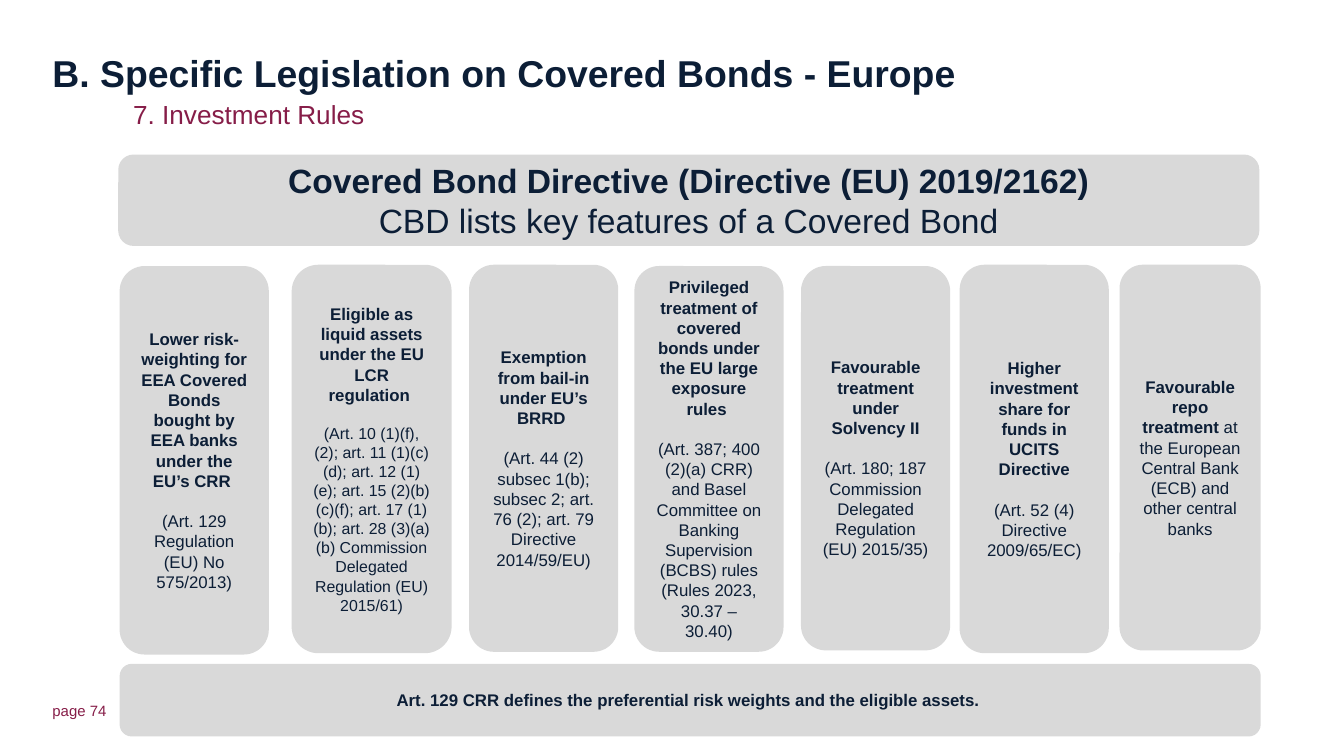
from dataclasses import dataclass

from pptx import Presentation
from pptx.dml.color import RGBColor
from pptx.enum.shapes import MSO_SHAPE
from pptx.enum.text import MSO_ANCHOR, PP_ALIGN
from pptx.util import Inches, Pt


@dataclass(frozen=True)
class Theme:
    font: str = "Arial"
    navy: str = "0C1E36"
    wine: str = "861D48"
    grey: str = "D9D9D9"
    title: float = 20
    banner: float = 18
    subtitle: float = 14
    body: float = 9
    small: float = 8.5
    page: float = 8


@dataclass(frozen=True)
class Box:
    left: float
    top: float
    width: float
    height: float


@dataclass(frozen=True)
class Card:
    box: Box
    heading: str
    source: str = ""
    tail: str = ""  # regular text that continues the heading
    source_size: float = Theme.body


THEME = Theme()

CARDS = [
    Card(Box(0.89, 1.98, 1.11, 2.89),
         "Lower risk-weighting for EEA Covered Bonds bought by EEA banks under the EU’s CRR ",
         "(Art. 129 Regulation (EU) No 575/2013)"),
    Card(Box(2.17, 1.97, 1.19, 2.89),
         "Eligible as liquid assets under the EU LCR regulation ",
         "(Art. 10 (1)(f), (2); art. 11 (1)(c)(d); art. 12 (1)(e); art. 15 (2)(b)(c)(f); "
         "art. 17 (1)(b); art. 28 (3)(a)(b) Commission Delegated Regulation (EU) 2015/61)",
         source_size=THEME.small),
    Card(Box(3.49, 1.97, 1.11, 2.88),
         "Exemption from bail-in under EU’s BRRD ",
         "(Art. 44 (2) subsec 1(b); subsec 2; art. 76 (2); art. 79 Directive 2014/59/EU)"),
    Card(Box(4.72, 1.98, 1.11, 2.87),
         "Privileged treatment of covered bonds under the EU large exposure rules ",
         "(Art. 387; 400 (2)(a) CRR) and Basel Committee on Banking Supervision (BCBS) "
         "rules (Rules 2023, 30.37 – 30.40)"),
    Card(Box(5.96, 1.98, 1.11, 2.86),
         "Favourable treatment under Solvency II",
         "(Art. 180; 187 Commission Delegated Regulation (EU) 2015/35)"),
    Card(Box(7.14, 1.97, 1.11, 2.89),
         "Higher investment share for funds in UCITS Directive",
         "(Art. 52 (4) Directive 2009/65/EC)"),
    Card(Box(8.33, 1.97, 1.05, 2.87),
         "Favourable repo treatment",
         tail=" at the European Central Bank (ECB) and other central banks"),
]


def place(box: Box) -> tuple:
    return Inches(box.left), Inches(box.top), Inches(box.width), Inches(box.height)


def add_run(p, text: str, size: float, bold: bool = False, color: str = THEME.navy) -> None:
    r = p.add_run()
    r.text = text
    r.font.name = THEME.font
    r.font.size = Pt(size)
    r.font.bold = bold
    r.font.color.rgb = RGBColor.from_string(color)


def format_plain(tf) -> None:
    """Wrapped, vertically centred text without insets."""
    tf.word_wrap = True
    tf.vertical_anchor = MSO_ANCHOR.MIDDLE
    tf.margin_left = tf.margin_right = tf.margin_top = tf.margin_bottom = 0
    tf.paragraphs[0].alignment = PP_ALIGN.LEFT


def add_label(slide, box: Box, text: str, size: float) -> None:
    tf = slide.shapes.add_textbox(*place(box)).text_frame
    format_plain(tf)
    add_run(tf.paragraphs[0], text, size, color=THEME.wine)


def add_panel(slide, box: Box):
    """Draw a grey rounded panel and return its text frame."""
    sp = slide.shapes.add_shape(MSO_SHAPE.ROUNDED_RECTANGLE, *place(box))
    sp.shadow.inherit = False
    sp.fill.solid()
    sp.fill.fore_color.rgb = RGBColor.from_string(THEME.grey)
    sp.line.fill.background()
    tf = sp.text_frame
    tf.word_wrap = True
    tf.vertical_anchor = MSO_ANCHOR.MIDDLE
    return tf


def centre(p):
    p.alignment = PP_ALIGN.CENTER
    return p


def add_card(slide, card: Card) -> None:
    tf = add_panel(slide, card.box)
    p = centre(tf.paragraphs[0])
    add_run(p, card.heading, THEME.body, bold=True)
    if card.tail:
        add_run(p, card.tail, THEME.body)
    if card.source:
        p = centre(tf.add_paragraph())
        p.space_before = Pt(card.source_size * 1.2)
        add_run(p, card.source, card.source_size)


def main() -> None:
    prs = Presentation()
    prs.slide_width = Inches(10)
    prs.slide_height = prs.slide_width * 9 // 16
    slide = prs.slides.add_slide(prs.slide_layouts[5])

    # Title, subtitle and page number
    title = slide.shapes.title
    title.left, title.top, title.width, title.height = place(Box(0.39, 0.37, 9.22, 0.34))
    format_plain(title.text_frame)
    add_run(title.text_frame.paragraphs[0],
            "B. Specific Legislation on Covered Bonds - Europe", THEME.title, bold=True)
    add_label(slide, Box(0.99, 0.73, 5.61, 0.24), "7. Investment Rules", THEME.subtitle)
    add_label(slide, Box(0.39, 5.22, 0.63, 0.13), "page 74", THEME.page)

    # Directive banner
    tf = add_panel(slide, Box(0.88, 1.15, 8.49, 0.68))
    add_run(centre(tf.paragraphs[0]),
            "Covered Bond Directive (Directive (EU) 2019/2162)", THEME.banner, bold=True)
    add_run(centre(tf.add_paragraph()),
            "CBD lists key features of a Covered Bond", THEME.banner)

    # Investment rule cards
    for card in CARDS:
        add_card(slide, card)

    # Closing statement
    tf = add_panel(slide, Box(0.89, 4.94, 8.49, 0.54))
    add_run(centre(tf.paragraphs[0]),
            "Art. 129 CRR defines the preferential risk weights and the eligible assets. ",
            THEME.body, bold=True)

    prs.save("out.pptx")


if __name__ == "__main__":
    main()
